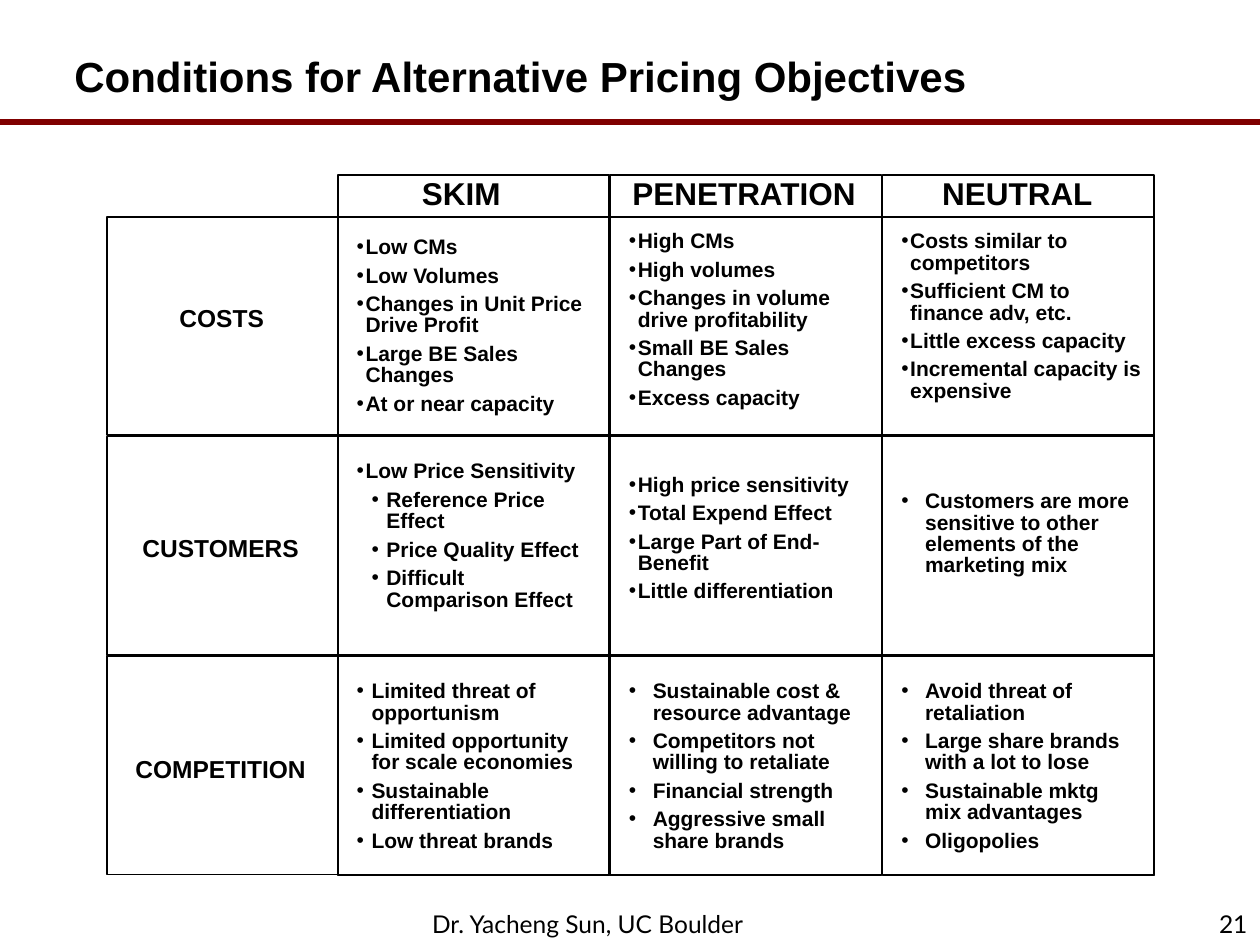
from dataclasses import dataclass

from lxml.etree import SubElement
from pptx import Presentation
from pptx.dml.color import RGBColor
from pptx.enum.shapes import MSO_CONNECTOR as Connector, MSO_SHAPE as Shape
from pptx.enum.text import MSO_ANCHOR as Anchor, MSO_AUTO_SIZE as AutoSize, PP_ALIGN as Align
from pptx.oxml.ns import qn
from pptx.slide import Slide
from pptx.util import Cm, Pt


@dataclass(frozen=True)
class Theme:
    ink: RGBColor = RGBColor(0, 0, 0)
    rule: RGBColor = RGBColor(0x80, 0, 0)
    font: str = "Arial"
    footer_font: str = "Lato"
    title: int = 24
    heading: int = 18
    label: int = 14
    body: int = 12


@dataclass(frozen=True)
class Frame:
    """A position and size in centimetres."""
    left: float
    top: float
    width: float
    height: float

    def lengths(self) -> tuple:
        return Cm(self.left), Cm(self.top), Cm(self.width), Cm(self.height)


@dataclass(frozen=True)
class Label:
    text: str
    frame: Frame
    size: int
    align: Align = Align.CENTER
    spacing: float = 0.85


@dataclass(frozen=True)
class BulletList:
    column: int
    top: float
    height: float
    indent: float
    items: tuple
    sub_items: tuple = ()
    width: float = 5.08


THEME = Theme()
TIGHT, NESTED = 0.18, 0.3
WIDE = 0.48
GRID = Frame(2.16, 3.53, 21.11, 14.12)
ROW_TOP, ROW_STEP, ROW_HEIGHT = 4.37, 4.43, 4.4
COLUMN_LEFT, COLUMN_STEP, COLUMN_WIDTH = 6.81, 5.49, 5.47

LABELS = (
    Label("Conditions for Alternative Pricing Objectives", Frame(1.32, 0.94, 18.6, 1.14),
          THEME.title, Align.LEFT, 1.0),
    Label("SKIM", Frame(8.2, 3.54, 2.2, 0.79), THEME.heading),
    Label("PENETRATION", Frame(12.45, 3.54, 5.1, 0.79), THEME.heading),
    Label("NEUTRAL", Frame(18.71, 3.54, 3.6, 0.79), THEME.heading),
    Label("COSTS", Frame(3.37, 6.12, 2.2, 0.66), THEME.label),
    Label("CUSTOMERS", Frame(2.55, 10.76, 3.8, 0.66), THEME.label),
    Label("COMPETITION", Frame(2.45, 15.21, 4, 0.66), THEME.label),
)

LISTS = (
    BulletList(0, 4.71, 3.73, TIGHT, (
        "Low CMs", "Low Volumes", "Changes in Unit Price Drive Profit",
        "Large BE Sales Changes", "At or near capacity")),
    BulletList(1, 4.59, 3.73, TIGHT, (
        "High CMs", "High volumes", "Changes in volume drive profitability",
        "Small BE Sales Changes", "Excess capacity")),
    BulletList(2, 4.59, 3.58, TIGHT, (
        "Costs similar to competitors", "Sufficient CM to finance adv, etc.",
        "Little excess capacity", "Incremental capacity is expensive"), width=5.28),
    BulletList(0, 9.23, 3.15, TIGHT, ("Low Price Sensitivity",), (
        "Reference Price Effect", "Price Quality Effect", "Difficult Comparison Effect")),
    BulletList(1, 9.5, 2.72, TIGHT, (
        "High price sensitivity", "Total Expend Effect",
        "Large Part of End-Benefit", "Little differentiation")),
    BulletList(2, 9.83, 1.88, WIDE, (
        "Customers are more sensitive to other elements of the marketing mix",)),
    BulletList(0, 13.66, 3.58, NESTED, (
        "Limited threat of opportunism", "Limited opportunity for scale economies",
        "Sustainable differentiation", "Low threat brands")),
    BulletList(1, 13.66, 3.58, WIDE, (
        "Sustainable cost & resource advantage", "Competitors not willing to retaliate",
        "Financial strength", "Aggressive small share brands")),
    BulletList(2, 13.66, 3.58, WIDE, (
        "Avoid threat of retaliation", "Large share brands with a lot to lose",
        "Sustainable mktg mix advantages", "Oligopolies")),
)


def apply(target, formats: dict) -> None:
    for name, value in formats.items():
        setattr(target, name, value)


def add_text_frame(page: Slide, frame: Frame, **formats):
    text_frame = page.shapes.add_textbox(*frame.lengths()).text_frame
    apply(text_frame, {"word_wrap": True, "auto_size": AutoSize.SHAPE_TO_FIT_TEXT, **formats})
    return text_frame


def add_content_frame(page: Slide, frame: Frame, wrap: bool):
    return add_text_frame(page, frame, word_wrap=wrap, margin_left=Cm(0.18),
                          margin_right=Cm(0.18), margin_top=Cm(0.08), margin_bottom=Cm(0.08))


def write(para, text: str, size: int, font: str = THEME.font, bold: bool = True, **formats) -> None:
    apply(para, formats)
    span = para.add_run()
    span.text = text
    apply(span.font, {"name": font, "size": Pt(size), "bold": bold})
    span.font.color.rgb = THEME.ink


def add_bullet(para, margin: float, hanging: float) -> None:
    properties = para._p.get_or_add_pPr()
    properties.set("marL", str(Cm(margin)))
    properties.set("indent", str(-Cm(hanging)))
    SubElement(properties, qn("a:buFont")).set("typeface", THEME.font)
    SubElement(properties, qn("a:buChar")).set("char", "•")


def draw_label(page: Slide, label: Label) -> None:
    text_frame = add_content_frame(page, label.frame, wrap=False)
    write(text_frame.paragraphs[0], label.text, label.size,
          alignment=label.align, line_spacing=label.spacing)


def draw_list(page: Slide, cell: BulletList) -> None:
    left = COLUMN_LEFT + 0.2 + cell.column * COLUMN_STEP
    text_frame = add_content_frame(page, Frame(left, cell.top, cell.width, cell.height), wrap=True)
    entries = [(text, 0, cell.indent, cell.indent) for text in cell.items]
    entries += [(text, 1, 2 * NESTED, NESTED) for text in cell.sub_items]
    for index, (text, level, margin, hanging) in enumerate(entries):
        para = text_frame.add_paragraph() if index else text_frame.paragraphs[0]
        write(para, text, THEME.body, level=level, line_spacing=0.85, space_after=Pt(4))
        add_bullet(para, margin, hanging)


def draw_outline(page: Slide, frame: Frame) -> None:
    box = page.shapes.add_shape(Shape.RECTANGLE, *frame.lengths())
    box.shadow.inherit = False
    box.fill.background()
    box.line.color.rgb = THEME.ink
    box.line.width = Pt(1)


def draw_title_rule(page: Slide) -> None:
    rule = page.shapes.add_connector(Connector.STRAIGHT, Cm(0), Cm(2.46), Cm(25.4), Cm(2.46))
    rule.line.color.rgb = THEME.rule
    rule.line.width = Pt(3)
    SubElement(rule._element.spPr, qn("a:effectLst"))


def draw_footer(page: Slide) -> None:
    author = add_text_frame(page, Frame(8.46, 18.21, 9.53, 0.84))
    number = add_text_frame(page, Frame(20.12, 17.78, 5.28, 1.27),
                            auto_size=AutoSize.NONE, vertical_anchor=Anchor.BOTTOM)
    for text_frame, text, align in ((author, "Dr. Yacheng Sun, UC Boulder", Align.LEFT),
                                    (number, "21", Align.RIGHT)):
        write(text_frame.paragraphs[0], text, THEME.label, THEME.footer_font, False, alignment=align)


def main() -> None:
    deck = Presentation()
    apply(deck, {"slide_width": Cm(25.4), "slide_height": Cm(19.05)})
    page = deck.slides.add_slide(deck.slide_layouts[6])
    draw_title_rule(page)
    for row in range(3):
        draw_outline(page, Frame(GRID.left, ROW_TOP + row * ROW_STEP, GRID.width, ROW_HEIGHT))
    for column in range(3):
        draw_outline(page, Frame(COLUMN_LEFT + column * COLUMN_STEP, GRID.top,
                                 COLUMN_WIDTH, GRID.height))
    for label in LABELS:
        draw_label(page, label)
    for cell in LISTS:
        draw_list(page, cell)
    draw_footer(page)
    deck.save("out.pptx")


if __name__ == "__main__":
    main()
